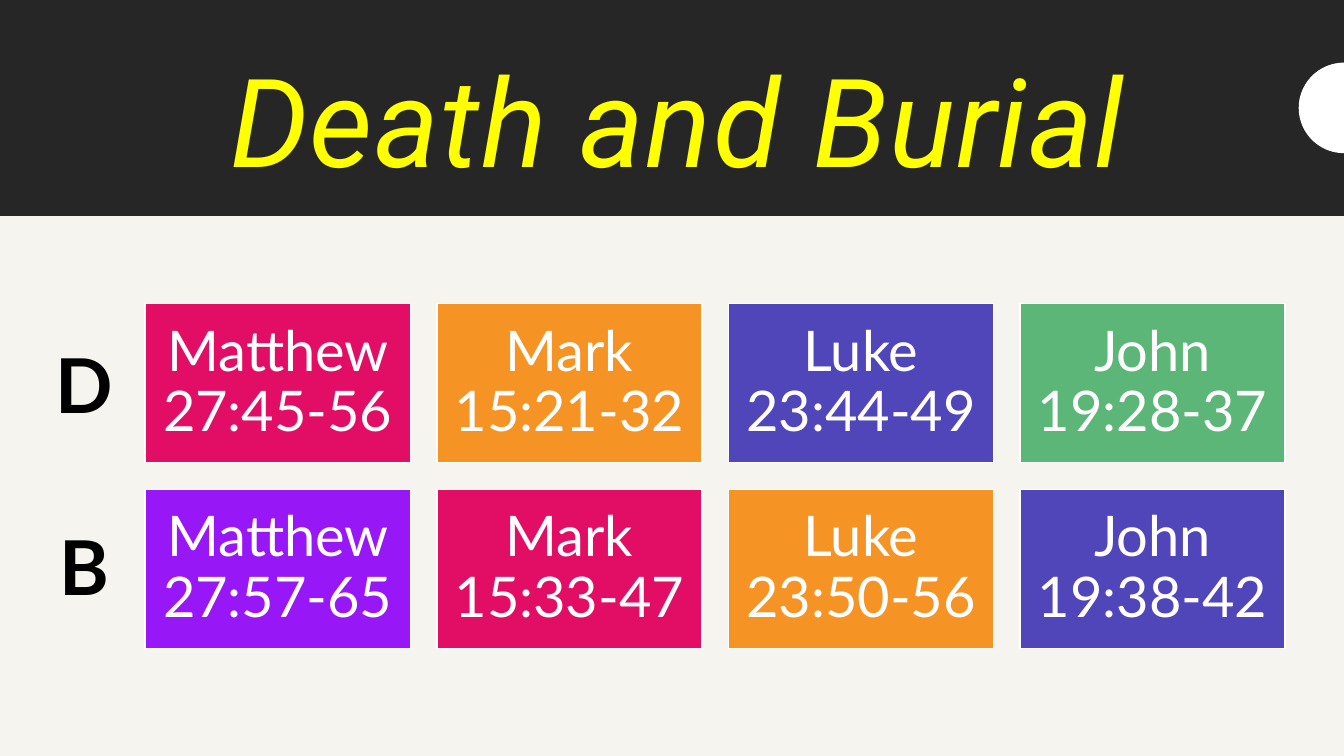
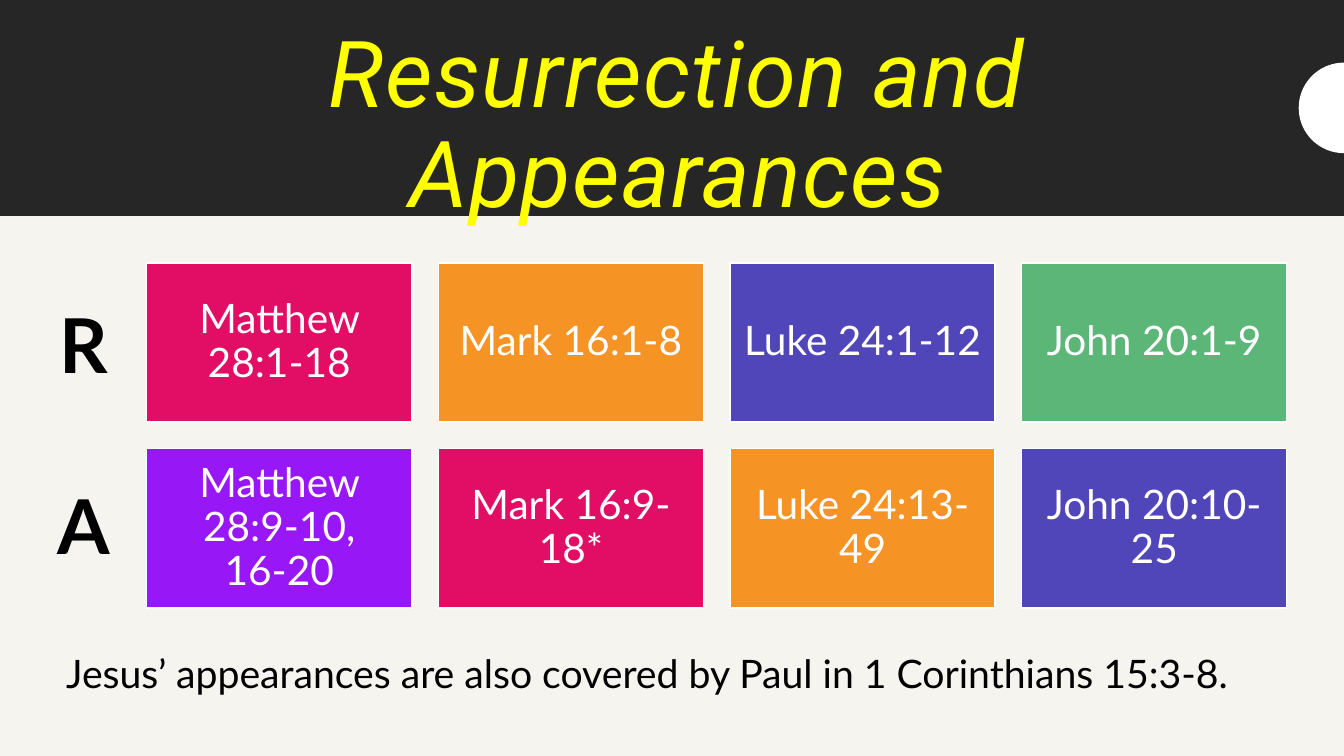
"""Build two slides that line up the Gospel passages on Easter events."""
import math

import lxml.etree
import pptx
import pptx.dml.color
import pptx.enum.shapes
import pptx.enum.text
import pptx.oxml.ns
import pptx.util

Cm, Pt = pptx.util.Cm, pptx.util.Pt
ALIGN, ANCHOR = pptx.enum.text.PP_ALIGN, pptx.enum.text.MSO_ANCHOR
RECTANGLE = pptx.enum.shapes.MSO_SHAPE.RECTANGLE

COLORS = {
    "paper": "F6F4EF", "band": "262626", "title": "FFFF00",
    "white": "FFFFFF", "black": "000000", "pink": "E20E65",
    "orange": "F59324", "indigo": "5046B9", "green": "5CB678",
    "violet": "9717F7",
}
CARD_COLORS = [
    ["pink", "orange", "indigo", "green"],
    ["violet", "pink", "orange", "indigo"],
]
SLIDES = [
    {
        "title": "Death and Burial", "title_size": 88,
        "left": 3.66, "top": 7.65, "card_size": 40, "inset": 0.43,
        "rows": [
            ("D", ["Matthew 27:45-56", "Mark 15:21-32", "Luke 23:44-49", "John 19:28-37"]),
            ("B", ["Matthew 27:57-65", "Mark 15:33-47", "Luke 23:50-56", "John 19:38-42"]),
        ],
    },
    {
        "title": "Resurrection and Appearances", "title_size": 66,
        "left": 3.7, "top": 6.63, "card_size": 29, "inset": 0.3,
        "rows": [
            ("R", ["Matthew 28:1-18", "Mark 16:1-8", "Luke 24:1-12", "John 20:1-9"]),
            ("A", ["Matthew 28:9-10,\v16-20", "Mark 16:9-18*", "Luke 24:13-49", "John 20:10-25"]),
        ],
        "note": "Jesus’ appearances are also covered by Paul in 1 Corinthians 15:3-8.",
    },
]
SLIDE_W, SLIDE_H, BAND_H = 33.87, 19.05, 5.44
CARD_W, CARD_H, GAP = 6.68, 4.01, 0.67
KNOB_RADIUS, KNOB_Y, KNOB_STEPS = 1.14, 2.72, 48
LETTER_SIZE = 54


def rgb(name):
    return pptx.dml.color.RGBColor.from_string(COLORS[name])


def paint(shape, fill, line=None):
    shape.shadow.inherit = False
    shape.fill.solid()
    shape.fill.fore_color.rgb = rgb(fill)
    if line:
        shape.line.color.rgb = rgb(line)
        shape.line.width = Pt(1)
    else:
        shape.line.fill.background()


def add_outline(run, color, width):
    outline = lxml.etree.Element(pptx.oxml.ns.qn("a:ln"), w=str(Pt(width)))
    fill = lxml.etree.SubElement(outline, pptx.oxml.ns.qn("a:solidFill"))
    lxml.etree.SubElement(fill, pptx.oxml.ns.qn("a:srgbClr"), val=COLORS[color])
    run.font._element.insert(0, outline)


def write(shape, text, size, color="black", font="Lato", bold=False, italic=False,
          align=ALIGN.CENTER, anchor=ANCHOR.TOP, inset=None, wrap=True,
          line_spacing=None, paragraph_gap=0, tracking=None, outline=None):
    frame = shape.text_frame
    frame.word_wrap = wrap
    frame.vertical_anchor = anchor
    if inset is not None:
        frame.margin_left = frame.margin_right = Cm(inset)
        frame.margin_top = frame.margin_bottom = Cm(inset)
    for index, line in enumerate(text.split("\n")):
        paragraph = frame.add_paragraph() if index else frame.paragraphs[0]
        paragraph.text = line
        paragraph.alignment = align
        paragraph.line_spacing = line_spacing
        if index:
            paragraph.space_before = Pt(paragraph_gap)
        for run in paragraph.runs:
            run.font.name, run.font.size = font, Pt(size)
            run.font.bold, run.font.italic = bold, italic
            run.font.color.rgb = rgb(color)
            if tracking:
                run.font._element.set("spc", str(tracking * 100))
            if outline:
                add_outline(run, outline, 0.75)


def add_box(slide, left, top, width, height):
    return slide.shapes.add_textbox(Cm(left), Cm(top), Cm(width), Cm(height))


def add_header(slide, title, size):
    slide.background.fill.solid()
    slide.background.fill.fore_color.rgb = rgb("paper")
    band = slide.shapes.add_shape(RECTANGLE, 0, 0, Cm(SLIDE_W), Cm(BAND_H))
    paint(band, "band")
    write(add_box(slide, 2.1, 1.37, 29.97, 3.68), title, size, color="title",
          font="Roboto", italic=True, anchor=ANCHOR.MIDDLE, line_spacing=0.9,
          tracking=1)
    angles = [math.pi * step / KNOB_STEPS for step in range(KNOB_STEPS + 1)]
    arc = [(Cm(SLIDE_W - KNOB_RADIUS * math.sin(angle)),
            Cm(KNOB_Y - KNOB_RADIUS * math.cos(angle))) for angle in angles]
    builder = slide.shapes.build_freeform(*arc[0])
    builder.add_line_segments(arc[1:], close=True)
    paint(builder.convert_to_shape(), "white")


def add_passages(slide, content):
    for row, (_, passages) in enumerate(content["rows"]):
        for column, passage in enumerate(passages):
            card = slide.shapes.add_shape(
                RECTANGLE,
                Cm(content["left"] + column * (CARD_W + GAP)),
                Cm(content["top"] + row * (CARD_H + GAP)),
                Cm(CARD_W), Cm(CARD_H))
            paint(card, CARD_COLORS[row][column], line="white")
            write(card, passage, content["card_size"], color="white",
                  anchor=ANCHOR.MIDDLE, inset=content["inset"], line_spacing=0.9)
    letters = "\n".join(letter for letter, _ in content["rows"])
    write(add_box(slide, 1.12, content["top"] + 0.75, 2, 7.19), letters,
          LETTER_SIZE, bold=True, wrap=False, paragraph_gap=LETTER_SIZE * 1.2,
          outline="white")


def main():
    deck = pptx.Presentation()
    deck.slide_width, deck.slide_height = Cm(SLIDE_W), Cm(SLIDE_H)
    for content in SLIDES:
        slide = deck.slides.add_slide(deck.slide_layouts[6])
        add_header(slide, content["title"], content["title_size"])
        add_passages(slide, content)
        if "note" in content:
            write(add_box(slide, 1.42, 16.23, 31.1, 1.45), content["note"], 28,
                  align=ALIGN.LEFT)
    deck.save("out.pptx")


if __name__ == "__main__":
    main()
